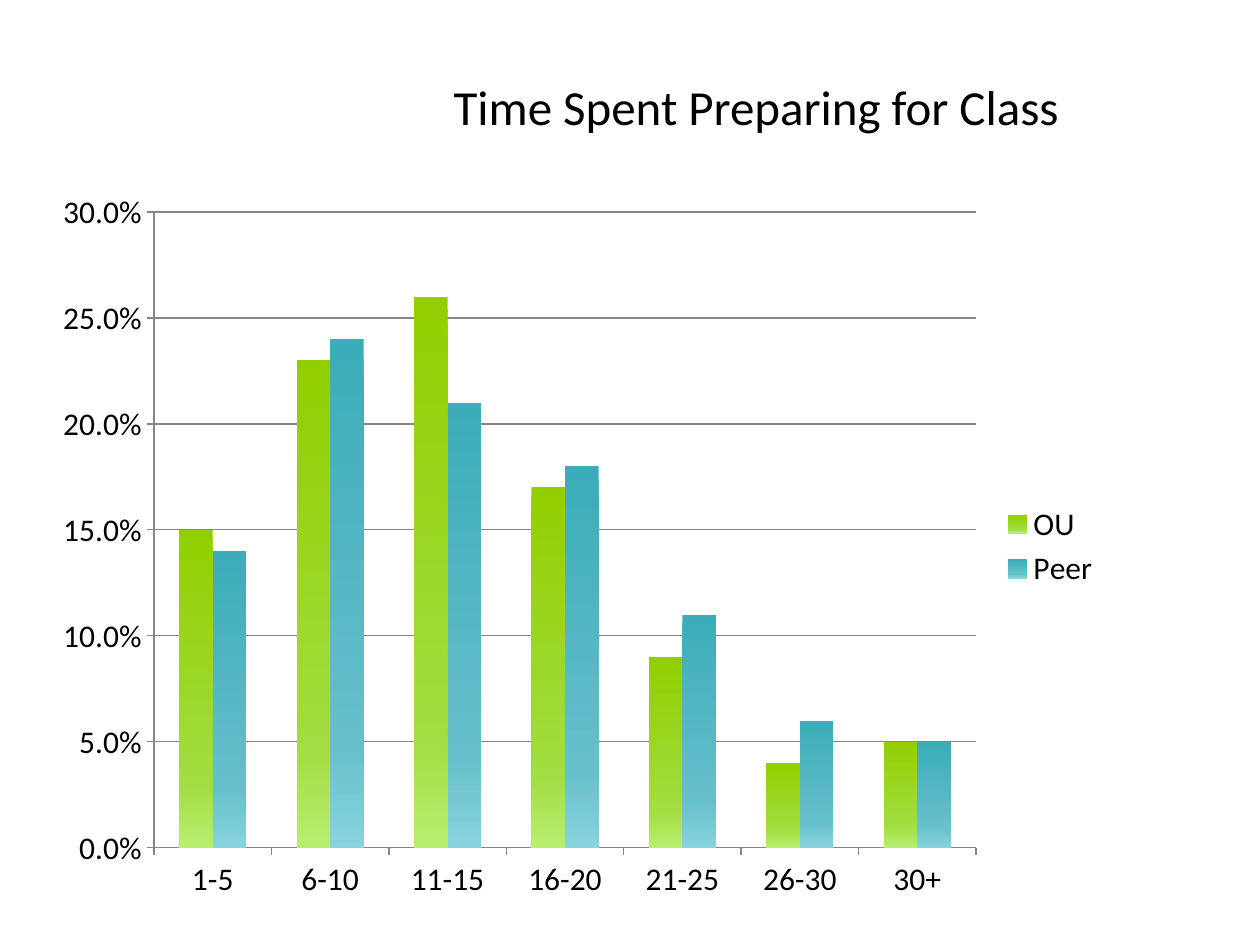
from copy import deepcopy
from dataclasses import dataclass

import lxml.etree
import pptx
import pptx.chart.data
import pptx.dml.color
import pptx.enum.chart
import pptx.enum.text
import pptx.oxml.ns
import pptx.util

EMU_PER_PX = 914400 / 126


@dataclass(frozen=True)
class Theme:
    font: str = "Calibri"
    text: str = "000000"
    grid: str = "868686"
    title_size: int = 28
    chart_size: int = 18
    own_bars: tuple[str, ...] = ("92CF00", "A2DD41", "B8EE70")
    peer_bars: tuple[str, ...] = ("3BACB9", "66C0CB", "88D3DC")


@dataclass(frozen=True)
class Box:
    left: int
    top: int
    width: int
    height: int

    def emu(self) -> tuple[int, ...]:
        return tuple(px(n) for n in (self.left, self.top, self.width, self.height))


@dataclass(frozen=True)
class Group:
    name: str
    shares: tuple[float, ...]
    shades: tuple[str, ...]


THEME = Theme()
TITLE_BOX = Box(73, 63, 998, 86)
CHART_BOX = Box(42, 179, 1071, 735)
PLOT_BOX = Box(154, 212, 822, 636)
SHADE_POSITIONS = (0, 0.8, 1)
HOURS = ("1-5", "6-10", "11-15", "16-20", "21-25", "26-30", "30+")
GROUPS = (
    Group("OU", (0.15, 0.23, 0.26, 0.17, 0.09, 0.04, 0.05), THEME.own_bars),
    Group("Peer", (0.14, 0.24, 0.21, 0.18, 0.11, 0.06, 0.05), THEME.peer_bars),
)


def px(length: int) -> int:
    return round(length * EMU_PER_PX)


def rgb(code: str) -> pptx.dml.color.RGBColor:
    return pptx.dml.color.RGBColor.from_string(code)


def style_font(font, size: int, color: str) -> None:
    font.name = THEME.font
    font.size = pptx.util.Pt(size)
    font.color.rgb = rgb(color)


def add_text(slide, text: str, box: Box, *, size: int, color: str, align, anchor) -> None:
    frame = slide.shapes.add_textbox(*box.emu()).text_frame
    frame.word_wrap = True
    frame.vertical_anchor = anchor
    paragraph = frame.paragraphs[0]
    paragraph.alignment = align
    run = paragraph.add_run()
    run.text = text
    style_font(run.font, size, color)


def shade_bars(bars, shades: tuple[str, ...]) -> None:
    fill = bars.format.fill
    fill.gradient()
    fill.gradient_angle = 270
    stop_list = next(bars._element.iter(pptx.oxml.ns.qn("a:gsLst")))
    stop_list.append(deepcopy(stop_list[-1]))
    for stop, position, shade in zip(fill.gradient_stops, SHADE_POSITIONS, shades):
        stop.position = position
        stop.color.rgb = rgb(shade)
    bars.invert_if_negative = False


def place_plot(chart, plot: Box, frame: Box) -> None:
    qn = pptx.oxml.ns.qn
    area = next(chart._chartSpace.iter(qn("c:plotArea")))
    for old in area.findall(qn("c:layout")):
        area.remove(old)
    layout = lxml.etree.Element(qn("c:layout"))
    area.insert(0, layout)
    manual = lxml.etree.SubElement(layout, qn("c:manualLayout"))
    settings = {
        "layoutTarget": "inner",
        "xMode": "edge",
        "yMode": "edge",
        "x": (plot.left - frame.left) / frame.width,
        "y": (plot.top - frame.top) / frame.height,
        "w": plot.width / frame.width,
        "h": plot.height / frame.height,
    }
    for tag, value in settings.items():
        lxml.etree.SubElement(manual, qn(f"c:{tag}")).set("val", str(value))


def style_line(line) -> None:
    line.color.rgb = rgb(THEME.grid)
    line.width = pptx.util.Pt(0.75)


def add_hours_chart(slide, groups: tuple[Group, ...]) -> None:
    enums = pptx.enum.chart
    hours_data = pptx.chart.data.CategoryChartData(number_format="0.0%")
    hours_data.categories = HOURS
    for group in groups:
        hours_data.add_series(group.name, group.shares)
    chart = slide.shapes.add_chart(
        enums.XL_CHART_TYPE.COLUMN_CLUSTERED, *CHART_BOX.emu(), hours_data
    ).chart
    style_font(chart.font, THEME.chart_size, THEME.text)
    chart.has_title = False
    chart.has_legend = True
    chart.legend.position = enums.XL_LEGEND_POSITION.RIGHT
    chart.legend.include_in_layout = False

    columns = chart.plots[0]
    columns.gap_width = 150
    columns.overlap = 0
    columns.vary_by_categories = False
    for bars, group in zip(columns.series, groups):
        shade_bars(bars, group.shades)

    for axis in (chart.category_axis, chart.value_axis):
        axis.major_tick_mark = enums.XL_TICK_MARK.OUTSIDE
        axis.minor_tick_mark = enums.XL_TICK_MARK.NONE
        style_line(axis.format.line)
    shares = chart.value_axis
    shares.minimum_scale, shares.maximum_scale, shares.major_unit = 0, 0.3, 0.05
    shares.has_major_gridlines = True
    style_line(shares.major_gridlines.format.line)
    shares.tick_labels.number_format = "0.0%"
    shares.tick_labels.number_format_is_linked = False
    place_plot(chart, PLOT_BOX, CHART_BOX)


def main() -> None:
    deck = pptx.Presentation()
    deck.slide_width, deck.slide_height = px(1260), px(945)
    slide = deck.slides.add_slide(deck.slide_layouts[6])
    add_text(
        slide,
        "Time Spent Preparing for Class",
        TITLE_BOX,
        size=THEME.title_size,
        color=THEME.text,
        align=pptx.enum.text.PP_ALIGN.RIGHT,
        anchor=pptx.enum.text.MSO_ANCHOR.MIDDLE,
    )
    add_hours_chart(slide, GROUPS)
    deck.save("out.pptx")


if __name__ == "__main__":
    main()
